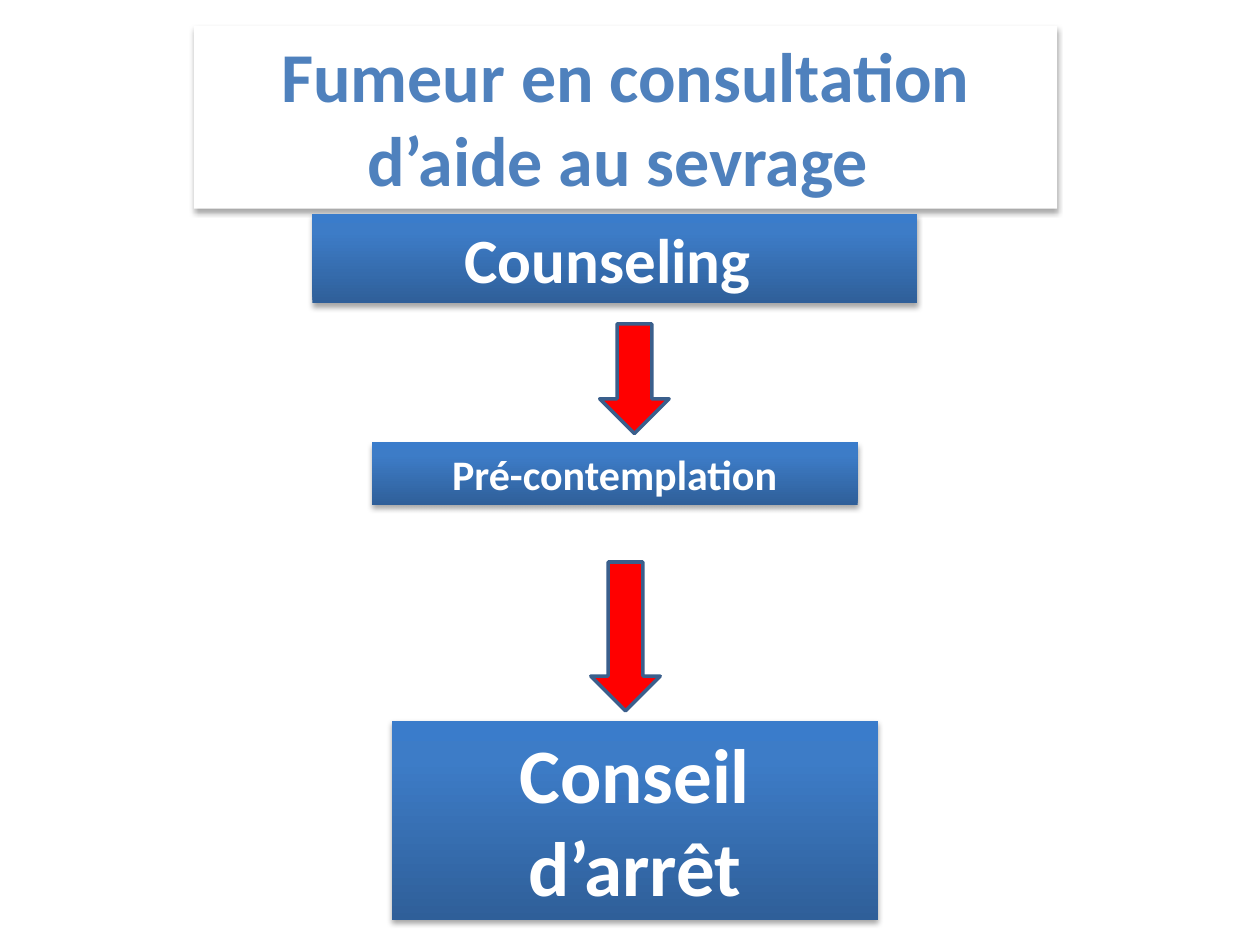
"""Build the smoking cessation counseling flow slide."""
from dataclasses import dataclass

from lxml import etree
from pptx import Presentation
from pptx.dml.color import RGBColor
from pptx.enum.shapes import MSO_SHAPE
from pptx.enum.text import MSO_ANCHOR, MSO_AUTO_SIZE, PP_ALIGN
from pptx.oxml import parse_xml
from pptx.oxml.ns import qn
from pptx.shapes.autoshape import Shape
from pptx.slide import Slide
from pptx.util import Cm, Pt

RECTANGLE = MSO_SHAPE.RECTANGLE
DOWN_ARROW = MSO_SHAPE.DOWN_ARROW
CENTER = PP_ALIGN.CENTER
TOP = MSO_ANCHOR.TOP
GROW = MSO_AUTO_SIZE.SHAPE_TO_FIT_TEXT
DRAWING = "http://schemas.openxmlformats.org/drawingml/2006/main"


@dataclass(frozen=True)
class Theme:
    font: str = "Calibri"
    white: str = "FFFFFF"
    title: str = "4F81BD"
    arrow: str = "FF0000"
    outline: str = "3A5F8C"
    outline_width: float = 2
    gradient: tuple[tuple[int, str], ...] = (
        (0, "2F5F99"), (80, "3D7CC7"), (100, "3A7CCB"))
    title_size: int = 40
    counseling_size: int = 36
    stage_size: int = 24
    advice_size: int = 44


@dataclass(frozen=True)
class Area:
    left: float
    top: float
    width: float
    height: float


@dataclass(frozen=True)
class Box:
    area: Area
    text: str
    size: int
    color: str
    filled: bool = True


THEME = Theme()
BOXES = (
    Box(Area(3.91, 0.53, 17.4, 3.68), "Fumeur en consultation d’aide au sevrage ",
        THEME.title_size, THEME.title, filled=False),
    Box(Area(7.49, 8.92, 9.8, 1.27), "Pré-contemplation",
        THEME.stage_size, THEME.white),
    Box(Area(6.3, 4.32, 12.19, 1.8), "Counseling ",
        THEME.counseling_size, THEME.white),
    Box(Area(7.9, 14.53, 9.8, 4.01), "Conseil d’arrêt",
        THEME.advice_size, THEME.white),
)
ARROWS = (Area(11.91, 11.33, 1.4, 3), Area(12.09, 6.53, 1.4, 2.21))


def add_plain_shape(slide: Slide, kind: MSO_SHAPE, area: Area, color: str) -> Shape:
    """Add a shape with a solid fill and no shadow."""
    shape = slide.shapes.add_shape(
        kind, Cm(area.left), Cm(area.top), Cm(area.width), Cm(area.height))
    shape.shadow.inherit = False
    shape.fill.solid()
    shape.fill.fore_color.rgb = RGBColor.from_string(color)
    return shape


def set_gradient(shape: Shape) -> None:
    """Replace the solid fill by the theme gradient, rising from the bottom."""
    stops = "".join(
        f'<a:gs pos="{position * 1000}"><a:srgbClr val="{color}"/></a:gs>'
        for position, color in THEME.gradient)
    gradient = parse_xml(
        f'<a:gradFill xmlns:a="{DRAWING}" rotWithShape="1"><a:gsLst>{stops}</a:gsLst>'
        '<a:lin ang="16200000" scaled="0"/></a:gradFill>')
    properties = shape._element.spPr
    properties.replace(properties.find(qn("a:solidFill")), gradient)


def add_shadow(shape: Shape) -> None:
    """Give the shape a soft shadow below it."""
    effects = shape._element.spPr.find(qn("a:effectLst"))
    shadow = etree.SubElement(
        effects, qn("a:outerShdw"), blurRad=str(Pt(3.1)), dist=str(Pt(1.8)),
        dir="5400000", rotWithShape="0")
    color = etree.SubElement(shadow, qn("a:srgbClr"), val="000000")
    etree.SubElement(color, qn("a:alpha"), val="35000")


def add_box(slide: Slide, box: Box) -> None:
    """Add a shadowed box with one centred bold paragraph."""
    shape = add_plain_shape(slide, RECTANGLE, box.area, THEME.white)
    shape.line.fill.background()
    if box.filled:
        set_gradient(shape)
    add_shadow(shape)
    frame = shape.text_frame
    frame_format = {"word_wrap": True, "auto_size": GROW, "vertical_anchor": TOP}
    for name, value in frame_format.items():
        setattr(frame, name, value)
    paragraph = frame.paragraphs[0]
    paragraph.alignment = CENTER
    run = paragraph.add_run()
    run.text = box.text
    font_format = {"name": THEME.font, "size": Pt(box.size), "bold": True}
    for name, value in font_format.items():
        setattr(run.font, name, value)
    run.font.color.rgb = RGBColor.from_string(box.color)


def add_arrow(slide: Slide, area: Area) -> None:
    """Add a red outlined down arrow."""
    shape = add_plain_shape(slide, DOWN_ARROW, area, THEME.arrow)
    shape.line.color.rgb = RGBColor.from_string(THEME.outline)
    shape.line.width = Pt(THEME.outline_width)


def main() -> None:
    """Build and save the presentation."""
    presentation = Presentation()
    presentation.slide_width = Cm(25.4)
    presentation.slide_height = Cm(19.05)
    slide = presentation.slides.add_slide(presentation.slide_layouts[6])
    for box in BOXES:
        add_box(slide, box)
    for area in ARROWS:
        add_arrow(slide, area)
    presentation.save("out.pptx")


if __name__ == "__main__":
    main()
